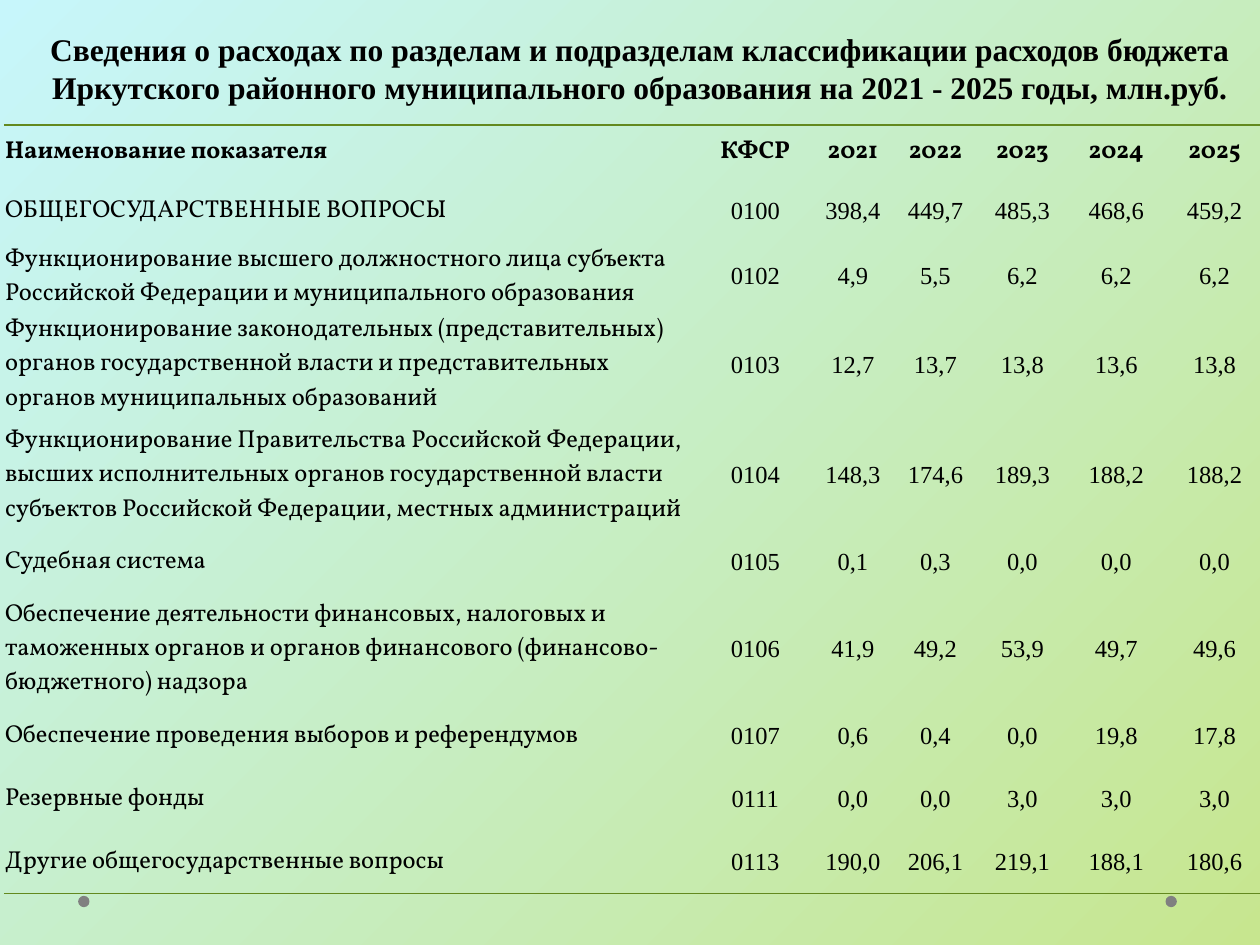
from dataclasses import dataclass

from lxml.etree import SubElement
from pptx import Presentation
from pptx.dml.color import RGBColor as Rgb
from pptx.enum.shapes import MSO_SHAPE as Shape
from pptx.enum.text import MSO_ANCHOR as Anchor, PP_ALIGN as Align
from pptx.oxml.ns import qn
from pptx.util import Inches, Pt


@dataclass(frozen=True)
class Theme:
    ink: str = "000000"
    rule: str = "63891F"
    dot: str = "808080"
    sky: str = "C7F6FB"
    lime: str = "C7E68F"
    serif: str = "Times New Roman"
    label: str = "Vollkorn"
    title_size: int = 18
    table_size: int = 14
    rule_width: int = 1
    no_grid_style: str = "{2D5ABB26-0587-4C30-8999-92F81FD0307C}"


THEME = Theme()
TITLE = ("Сведения о расходах по разделам и подразделам классификации расходов бюджета "
         "Иркутского районного муниципального образования на 2021 - 2025 годы, млн.руб.")
HEADINGS = ("Наименование показателя", "КФСР", "2021", "2022", "2023", "2024", "2025")
EXPENSES = [
    ("ОБЩЕГОСУДАРСТВЕННЫЕ ВОПРОСЫ",
     "0100", "398,4", "449,7", "485,3", "468,6", "459,2"),
    ("Функционирование высшего должностного лица субъекта Российской Федерации "
     "и муниципального образования",
     "0102", "4,9", "5,5", "6,2", "6,2", "6,2"),
    ("Функционирование законодательных (представительных) органов государственной власти "
     "и представительных органов муниципальных образований",
     "0103", "12,7", "13,7", "13,8", "13,6", "13,8"),
    ("Функционирование Правительства Российской Федерации, высших исполнительных органов "
     "государственной власти субъектов Российской Федерации, местных администраций",
     "0104", "148,3", "174,6", "189,3", "188,2", "188,2"),
    ("Судебная система",
     "0105", "0,1", "0,3", "0,0", "0,0", "0,0"),
    ("Обеспечение деятельности финансовых, налоговых и таможенных органов и органов "
     "финансового (финансово-бюджетного) надзора",
     "0106", "41,9", "49,2", "53,9", "49,7", "49,6"),
    ("Обеспечение проведения выборов и референдумов",
     "0107", "0,6", "0,4", "0,0", "19,8", "17,8"),
    ("Резервные фонды",
     "0111", "0,0", "0,0", "3,0", "3,0", "3,0"),
    ("Другие общегосударственные вопросы",
     "0113", "190,0", "206,1", "219,1", "188,1", "180,6"),
]
COLUMN_WIDTHS = (5.52, 0.89, 0.66, 0.65, 0.73, 0.76, 0.8)
ROW_HEIGHTS = (0.43, 0.5, 0.53, 0.88, 0.88, 0.5, 0.88, 0.5, 0.5, 0.5)
DOT_LEFTS = (9.25, 0.62)


def write(frame, text, font, size, bold=False, align=Align.CENTER):
    frame.word_wrap = True
    paragraph = frame.paragraphs[0]
    paragraph.alignment = align
    run = paragraph.add_run()
    run.text = text
    run.font.name = font
    run.font.size = Pt(size)
    run.font.bold = bold
    run.font.color.rgb = Rgb.from_string(THEME.ink)


def add_rule(cell, side):
    properties = cell._tc.get_or_add_tcPr()
    line = SubElement(properties, qn(f"a:{side}"), w=str(Pt(THEME.rule_width)))
    fill = SubElement(line, qn("a:solidFill"))
    SubElement(fill, qn("a:srgbClr"), val=THEME.rule)


def paint_background(slide):
    fill = slide.background.fill
    fill.gradient()
    fill.gradient_angle = 315
    for stop, color in zip(fill.gradient_stops, (THEME.sky, THEME.lime)):
        stop.color.rgb = Rgb.from_string(color)


def add_dots(slide):
    for left in DOT_LEFTS:
        dot = slide.shapes.add_shape(
            Shape.OVAL, Inches(left), Inches(7.11), Inches(0.09), Inches(0.09))
        dot.shadow.inherit = False
        dot.fill.solid()
        dot.fill.fore_color.rgb = Rgb.from_string(THEME.dot)
        dot.line.fill.background()


def add_title(slide):
    title = slide.shapes.add_textbox(Inches(0.16), Inches(0.13), Inches(9.84), Inches(0.76))
    title.text_frame.vertical_anchor = Anchor.BOTTOM
    write(title.text_frame, TITLE, THEME.serif, THEME.title_size, bold=True)


def add_expenses(slide):
    rows = [HEADINGS, *EXPENSES]
    frame = slide.shapes.add_table(
        len(rows), len(HEADINGS), Inches(0.03), Inches(0.99),
        Inches(sum(COLUMN_WIDTHS)), Inches(sum(ROW_HEIGHTS)))
    table = frame.table
    table.first_row = table.horz_banding = False
    next(frame.element.iter(qn("a:tableStyleId"))).text = THEME.no_grid_style
    for column, width in zip(table.columns, COLUMN_WIDTHS):
        column.width = Inches(width)
    for row, height in zip(table.rows, ROW_HEIGHTS):
        row.height = Inches(height)

    for r, values in enumerate(rows):
        for c, value in enumerate(values):
            cell = table.cell(r, c)
            cell.margin_left = cell.margin_right = cell.margin_top = Inches(0.01)
            cell.margin_bottom = 0
            cell.vertical_anchor = Anchor.MIDDLE
            if r == 0:
                add_rule(cell, "lnT")
            if r == len(rows) - 1:
                add_rule(cell, "lnB")
            cell.fill.background()
            write(cell.text_frame, value,
                  THEME.label if r == 0 or c == 0 else THEME.serif,
                  THEME.table_size, bold=r == 0,
                  align=Align.LEFT if c == 0 else Align.CENTER)


def main():
    deck = Presentation()
    deck.slide_width, deck.slide_height = Inches(10), Inches(7.5)
    slide = deck.slides.add_slide(deck.slide_layouts[6])
    paint_background(slide)
    add_dots(slide)
    add_title(slide)
    add_expenses(slide)
    deck.save("out.pptx")


if __name__ == "__main__":
    main()
